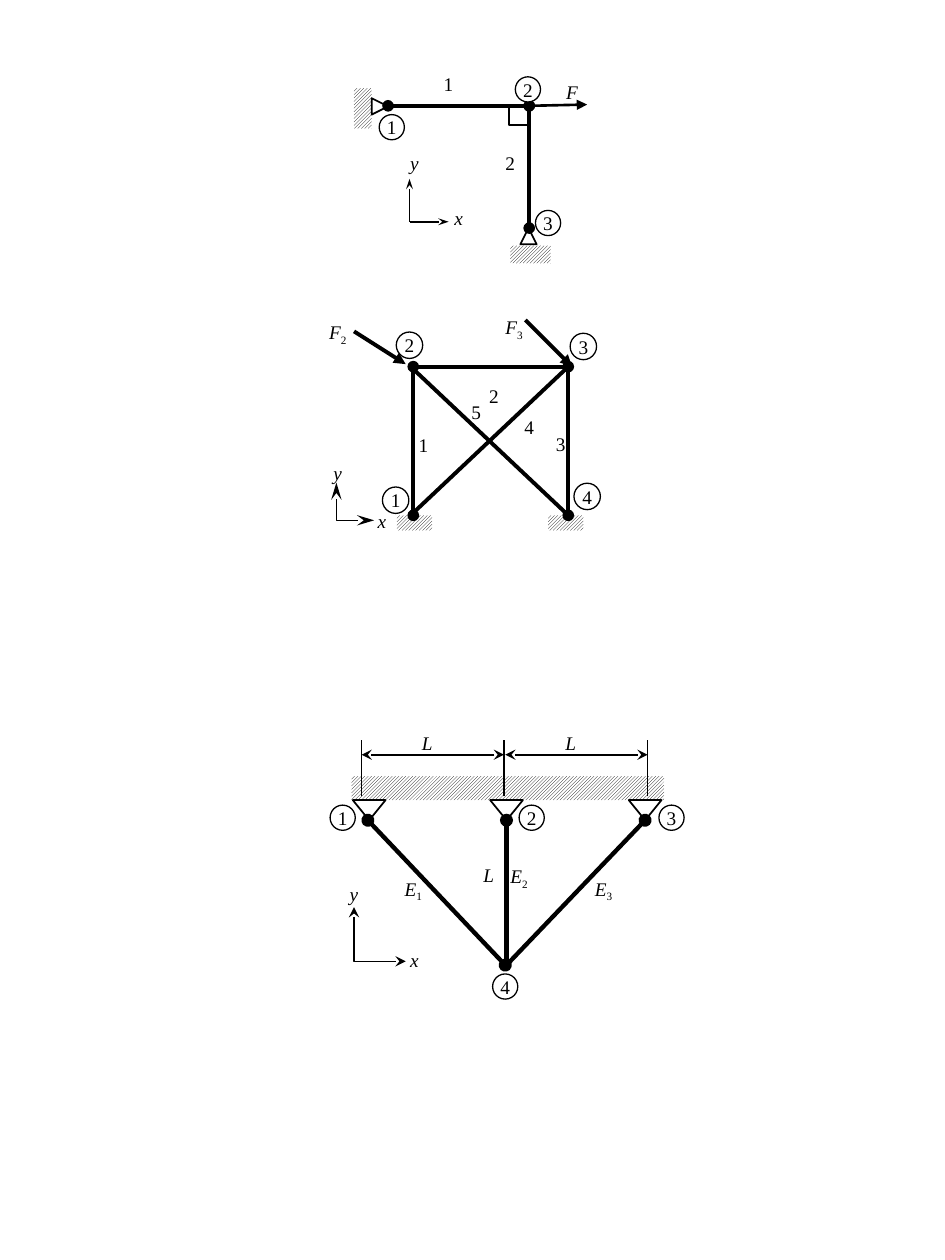
from lxml import etree
from pptx import Presentation
from pptx.dml.color import RGBColor
from pptx.enum.dml import MSO_PATTERN as Pattern
from pptx.enum.shapes import MSO_CONNECTOR as Link, MSO_SHAPE as Preset
from pptx.enum.text import MSO_ANCHOR as Anchor, PP_ALIGN as Align
from pptx.oxml.ns import qn
from pptx.util import Cm, Pt

COLORS = {"ink": "000000", "paper": "FFFFFF"}
FONT, SIZE = "Times New Roman", 11
UNIT = 2.54  # the drawings are laid out in units of 2.54 cm
THIN, MEDIUM, BAR = 0.75, 1, 2.25
LIGHT, DARK = Pattern.LIGHT_UPWARD_DIAGONAL, Pattern.DARK_UPWARD_DIAGONAL
SMALL_TIP, TIP, LONG_TIP = ("sm", "med"), ("med", "med"), ("med", "lg")

# hatches and supports: left, top, width, height (supports add a rotation)
# lines: from, to, weight, head, tail, tip size
# labels: text, centre x, top, width, height ("_" starts a subscript)
# nodes: number, centre x, centre y
two_bars = {
    "pattern": LIGHT,
    "hatches": [(4.05, 1.95, 0.32, 0.14), (2.81, 0.7, 0.14, 0.32)],
    "support_fill": None,
    "supports": [(4.13, 1.81, 0.13, 0.13, 0), (2.95, 0.78, 0.13, 0.13, 90)],
    "lines": [
        ((3.08, 0.84), (4.2, 0.84), BAR, "oval", "oval", TIP),
        ((4.2, 1.81), (4.2, 0.84), BAR, "oval", "oval", TIP),
        ((3.25, 1.76), (3.56, 1.76), MEDIUM, None, "stealth", SMALL_TIP),
        ((3.25, 1.76), (3.25, 1.42), MEDIUM, None, "stealth", SMALL_TIP),
        ((4.2, 0.84), (4.66, 0.83), 1.5, None, "triangle", TIP),
    ],
    "bends": [([(4.04, 0.84), (4.04, 0.99), (4.19, 0.99)], MEDIUM, None, TIP)],
    "labels": [
        ("1", 3.56, 0.57, 0.22, 0.25), ("2", 4.05, 1.2, 0.19, 0.25),
        ("x", 3.64, 1.64, 0.22, 0.24), ("y", 3.29, 1.2, 0.22, 0.25),
        ("F", 4.54, 0.64, 0.22, 0.25),
    ],
    "node_size": 0.2, "node_fill": "paper",
    "nodes": [("1", 3.11, 1.01), ("2", 4.19, 0.71), ("3", 4.35, 1.77)],
}
braced_frame = {
    "pattern": LIGHT,
    "hatches": [(4.35, 4.09, 0.28, 0.12), (3.15, 4.09, 0.28, 0.12)],
    "support_fill": None,
    "supports": [],
    "lines": [
        ((3.28, 4.09), (3.28, 2.91), BAR, "oval", "oval", TIP),
        ((3.27, 2.91), (4.52, 2.91), BAR, None, None, TIP),
        ((4.51, 2.91), (4.51, 4.09), BAR, "oval", "oval", TIP),
        ((3.27, 2.92), (4.51, 4.09), BAR, None, None, TIP),
        ((4.51, 2.91), (3.27, 4.08), BAR, None, None, TIP),
        ((2.81, 2.63), (3.22, 2.89), BAR, None, "triangle", TIP),
        ((4.17, 2.54), (4.54, 2.91), BAR, None, "triangle", TIP),
    ],
    "bends": [([(2.67, 3.83), (2.67, 4.13), (2.97, 4.13)], THIN, "stealth", LONG_TIP)],
    "labels": [
        ("4", 4.2, 3.3, 0.18, 0.16), ("2", 3.92, 3.05, 0.28, 0.18),
        ("1", 3.36, 3.44, 0.17, 0.18), ("3", 4.45, 3.43, 0.18, 0.16),
        ("5", 3.78, 3.18, 0.18, 0.16), ("y", 2.68, 3.66, 0.18, 0.16),
        ("x", 3.03, 4.04, 0.18, 0.16), ("F_2", 2.68, 2.54, 0.18, 0.2),
        ("F_3", 4.08, 2.5, 0.18, 0.2),
    ],
    "node_size": 0.21, "node_fill": None,
    "nodes": [("1", 3.14, 3.97), ("2", 3.25, 2.74), ("3", 4.63, 2.75), ("4", 4.66, 3.94)],
}
hanging_bars = {
    "pattern": DARK,
    "hatches": [(2.79, 6.16, 2.48, 0.19)],
    "support_fill": "paper",
    "supports": [(left, 6.35, 0.26, 0.16, 180) for left in (2.8, 3.89, 4.99)],
    "lines": [
        ((4.02, 6.51), (4.02, 7.66), 2.5, "oval", None, TIP),
        ((5.12, 6.51), (4.02, 7.66), 2.5, "oval", None, TIP),
        ((2.92, 6.51), (4.01, 7.66), 2.5, "oval", "oval", TIP),
        *[((x, 6.32), (x, 5.87), THIN, None, None, TIP) for x in (2.87, 4, 5.14)],
        ((5.14, 5.99), (4.01, 5.99), MEDIUM, "stealth", "stealth", TIP),
        ((4, 5.99), (2.87, 5.99), MEDIUM, "stealth", "stealth", TIP),
    ],
    "bends": [([(2.81, 7.2), (2.81, 7.63), (3.22, 7.63)], THIN, "stealth", TIP)],
    "labels": [
        ("E_1", 3.28, 6.96, 0.27, 0.23), ("E_2", 4.12, 6.86, 0.27, 0.34),
        ("E_3", 4.79, 6.96, 0.27, 0.23), ("L", 3.39, 5.8, 0.27, 0.21),
        ("L", 4.53, 5.8, 0.27, 0.21), ("L", 3.88, 6.85, 0.27, 0.34),
        ("x", 3.29, 7.53, 0.27, 0.34), ("y", 2.81, 7, 0.27, 0.34),
    ],
    "node_size": 0.2, "node_fill": None,
    "nodes": [("1", 2.72, 6.49), ("2", 4.22, 6.49), ("3", 5.33, 6.49), ("4", 4.01, 7.83)],
}


def scaled(*values):
    return [Cm(value * UNIT) for value in values]


def color(name):
    return RGBColor.from_string(COLORS[name])


def set_fill(shape, name):
    if name:
        shape.fill.solid()
        shape.fill.fore_color.rgb = color(name)
    else:
        shape.fill.background()


def set_line(shape, weight, head=None, tail=None, tip=TIP):
    shape.line.width = Pt(weight)
    shape.line.color.rgb = color("ink")
    for tag, kind in (("a:headEnd", head), ("a:tailEnd", tail)):
        if kind:
            etree.SubElement(shape.line._get_or_add_ln(), qn(tag),
                             type=kind, w=tip[0], len=tip[1])


def write(shape, text, anchor):
    frame = shape.text_frame
    frame.word_wrap = True
    frame.vertical_anchor = anchor
    frame.margin_left = frame.margin_right = frame.margin_top = frame.margin_bottom = 0
    para = frame.paragraphs[0]
    para.alignment = Align.CENTER
    para.font.name, para.font.size = FONT, Pt(SIZE)
    para.font.color.rgb = color("ink")
    base, _, subscript = text.partition("_")
    span = para.add_run()
    span.text = base
    span.font.italic = base.isalpha()
    if subscript:
        span = para.add_run()
        span.text = subscript
        span._r.get_or_add_rPr().set("baseline", "-25000")


def add_preset(page, preset, place):
    shape = page.shapes.add_shape(preset, *scaled(*place))
    shape.shadow.inherit = False
    return shape


def draw(page, diagram):
    # Hatched ground and pin supports
    for place in diagram["hatches"]:
        ground = add_preset(page, Preset.RECTANGLE, place)
        ground.fill.patterned()
        ground.fill.pattern = diagram["pattern"]
        ground.fill.fore_color.rgb = color("ink")
        ground.fill.back_color.rgb = color("paper")
        ground.line.fill.background()
    for *place, rotation in diagram["supports"]:
        support = add_preset(page, Preset.ISOSCELES_TRIANGLE, place)
        support.rotation = rotation
        set_fill(support, diagram["support_fill"])
        set_line(support, MEDIUM)

    # Bars, forces, axes and dimensions
    for start, end, *style in diagram["lines"]:
        line = page.shapes.add_connector(Link.STRAIGHT, *scaled(*start, *end))
        set_line(line, *style)
        etree.SubElement(line._element.spPr, qn("a:effectLst"))
    for points, weight, end, tip in diagram["bends"]:
        first, *rest = [scaled(*point) for point in points]
        builder = page.shapes.build_freeform(*first)
        builder.add_line_segments(rest, close=False)
        bend = builder.convert_to_shape()
        bend.shadow.inherit = False
        set_fill(bend, None)
        set_line(bend, weight, end, end, tip)

    # Labels and numbered nodes
    for text, center, top, width, height in diagram["labels"]:
        box = page.shapes.add_textbox(*scaled(center - width / 2, top, width, height))
        write(box, text, Anchor.TOP)
    size = diagram["node_size"]
    for number, x, y in diagram["nodes"]:
        node = add_preset(page, Preset.OVAL, (x - size / 2, y - size / 2, size, size))
        set_fill(node, diagram["node_fill"])
        set_line(node, THIN)
        write(node, number, Anchor.MIDDLE)


def main():
    deck = Presentation()
    deck.slide_width, deck.slide_height = Cm(19.05), Cm(25.4)
    page = deck.slides.add_slide(deck.slide_layouts[6])
    for diagram in (two_bars, braced_frame, hanging_bars):
        draw(page, diagram)
    deck.save("out.pptx")


if __name__ == "__main__":
    main()
